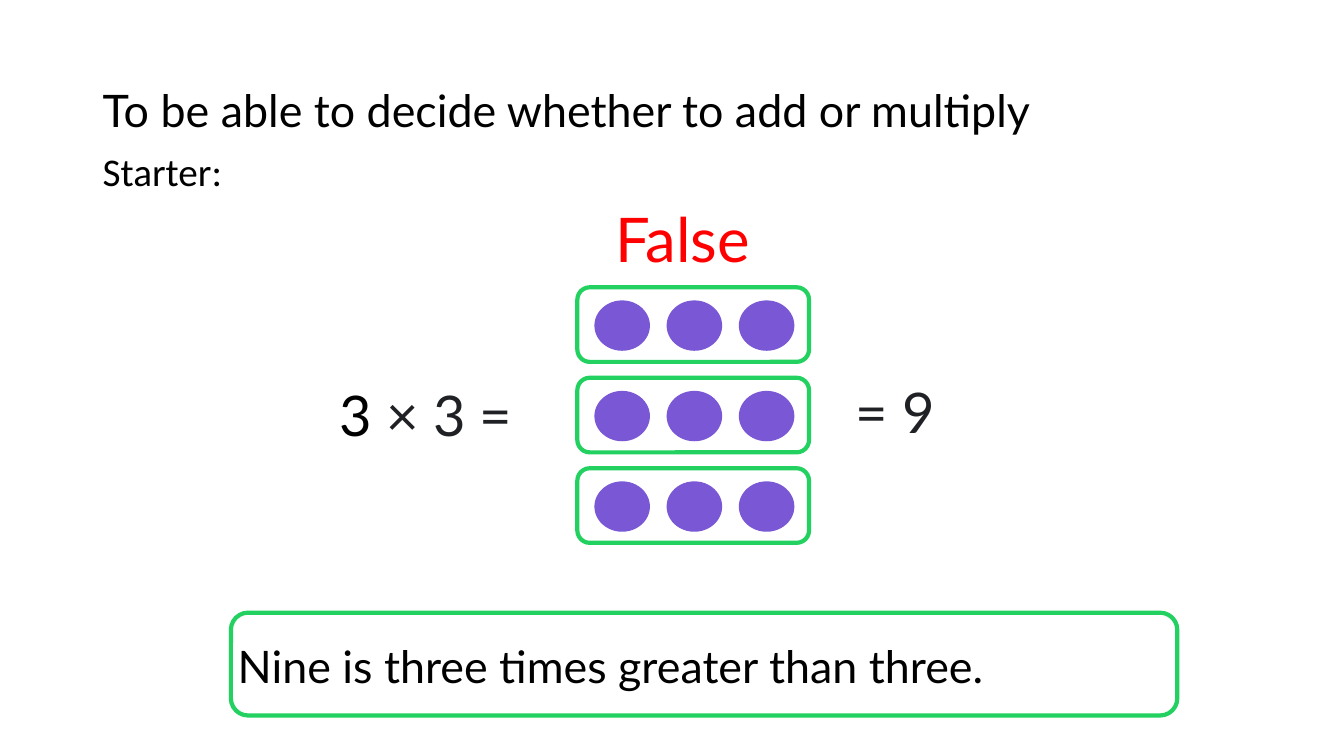
from pptx import Presentation
from pptx import util as u
from pptx.dml import color
from pptx.enum import shapes, text

COLOURS = {"black": "000000", "ink": "202124", "red": "FF0000",
           "green": "23D160", "purple": "7957D5"}
ROWS, COLUMNS = 3, 3


def rgb(name):
    return color.RGBColor.from_string(COLOURS[name])


def add_text(page, box, paras, para_format=None, **frame_format):
    """Each paragraph is (alignment, spans); a span is (words, size, font, colour)."""
    frame = page.shapes.add_textbox(*map(u.Cm, box)).text_frame
    for name, value in ({"word_wrap": True} | frame_format).items():
        setattr(frame, name, value)
    for index, (alignment, spans) in enumerate(paras):
        para = frame.add_paragraph() if index else frame.paragraphs[0]
        para.alignment = alignment
        for name, value in (para_format or {}).items():
            if index or name != "space_before":
                setattr(para, name, value)
        for words, size, font, colour in spans:
            span = para.add_run()
            span.text = words
            for name, value in {"size": u.Pt(size), "name": font}.items():
                setattr(span.font, name, value)
            span.font.color.rgb = rgb(colour)


def add_shape(parent, kind, box, fill=None, line=None):
    shape = parent.shapes.add_shape(kind, *map(u.Cm, box))
    shape.shadow.inherit = False
    if fill:
        shape.fill.solid()
        shape.fill.fore_color.rgb = rgb(fill)
    else:
        shape.fill.background()
    if line:
        shape.line.color.rgb = rgb(line)
        shape.line.width = u.Pt(3)
    else:
        shape.line.fill.background()


def add_heading(page, left, top):
    # Learning objective
    add_text(page, (left, top, 24.38, 3.68),
             [(text.PP_ALIGN.LEFT,
               [("To be able to decide whether to add or multiply", 32, "Lato", "black")])],
             {"line_spacing": 0.9}, vertical_anchor=text.MSO_ANCHOR.MIDDLE)
    # Starter label and verdict
    add_text(page, (left, top + 2.71, 29.72, 12.09),
             [(text.PP_ALIGN.LEFT, [("Starter:", 28, "Calibri", "black")]),
              (text.PP_ALIGN.CENTER, [("False", 44, "Lato", "red")])],
             {"line_spacing": 0.9, "space_before": u.Pt(10)})


def add_statement(page, left, top, width, height):
    add_text(page, (left - 0.08, top + 0.54, width + 1.27, 1.63),
             [(text.PP_ALIGN.LEFT,
               [("Nine is three times greater than three.", 32, "Lato", "black")])],
             auto_size=text.MSO_AUTO_SIZE.SHAPE_TO_FIT_TEXT)
    add_shape(page, shapes.MSO_SHAPE.ROUNDED_RECTANGLE,
              (left, top, width, height), line="green")


def add_array(page, left, top, row_pitch):
    # One group per row: a frame around equally spaced counters
    for row in range(ROWS):
        group = page.shapes.add_group_shape()
        row_top = top + row * row_pitch
        add_shape(group, shapes.MSO_SHAPE.ROUNDED_RECTANGLE,
                  (left, row_top, 5.84, 1.88), line="green")
        for column in range(COLUMNS):
            add_shape(group, shapes.MSO_SHAPE.OVAL,
                      (left + 0.43 + column * 1.82, row_top + 0.33, 1.4, 1.27),
                      fill="purple")


def add_equation(page, box, spans):
    add_text(page, box,
             [(text.PP_ALIGN.LEFT,
               [(words, 40, "Lato", colour) for words, colour in spans])],
             word_wrap=False, auto_size=text.MSO_AUTO_SIZE.SHAPE_TO_FIT_TEXT)


def main():
    deck = Presentation()
    deck.slide_width, deck.slide_height = u.Cm(33.87), u.Cm(19.05)
    page = deck.slides.add_slide(deck.slide_layouts[6])
    add_heading(page, 2.34, 1.02)
    add_statement(page, 5.82, 15.44, 23.85, 2.59)
    add_array(page, 14.55, 7.24, 2.28)
    # Both sides of the array
    add_equation(page, (8.31, 9.47, 6.63, 1.96), [("3 ", "black"), ("× 3 =", "ink")])
    add_equation(page, (21.31, 9.4, 3.66, 1.96), [("= 9", "ink")])
    deck.save("out.pptx")


if __name__ == "__main__":
    main()
